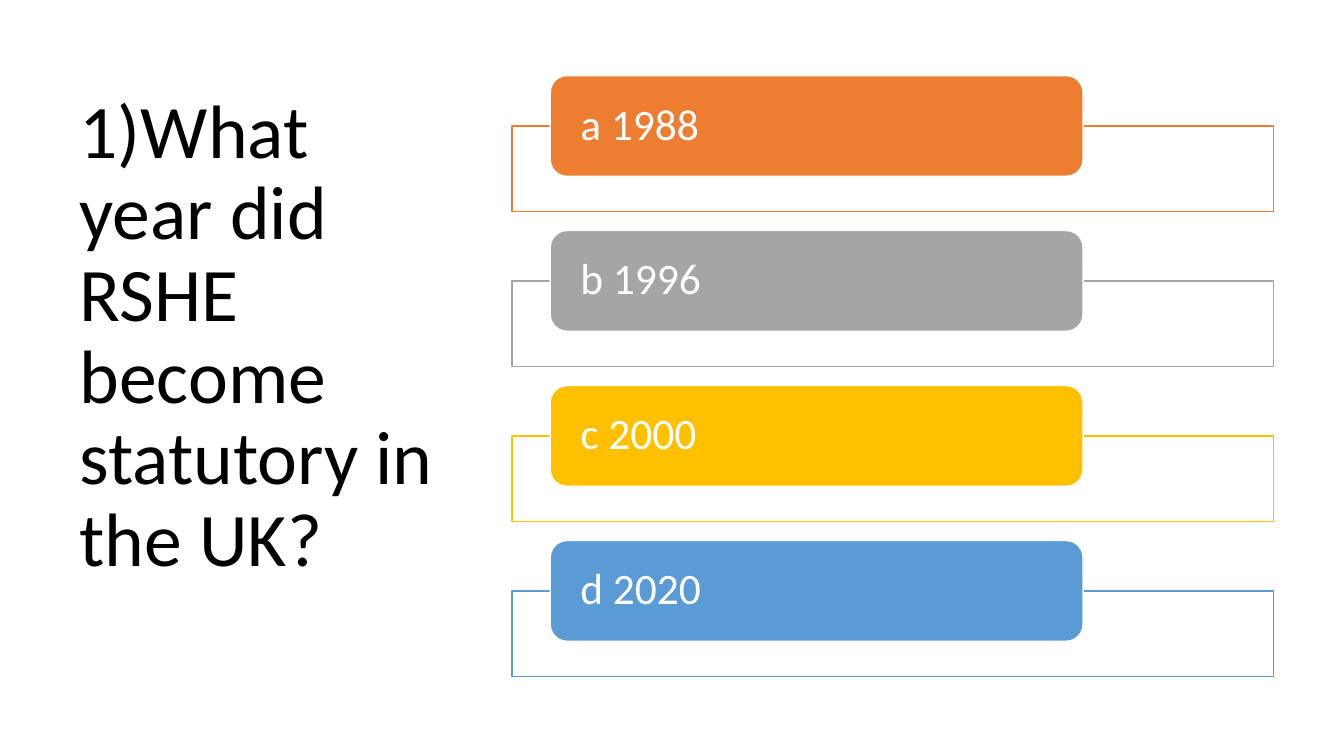
from dataclasses import dataclass

from lxml import etree
from pptx import Presentation
from pptx import util as u
from pptx.dml.color import RGBColor
from pptx.enum import shapes, text
from pptx.oxml.ns import qn


@dataclass(frozen=True)
class Theme:
    font: str = "Calibri"
    ink: str = "000000"
    paper: str = "FFFFFF"
    hues: tuple = ("ED7D31", "A5A5A5", "FFC000", "5B9BD5")
    head: int = 54
    body: int = 31


THEME = Theme()
WIDE, HIGH = 13.33, 7.5


def write(shape, words, size, color, pad=(0.1, 0.05, 0.1, 0.05)):
    """Fill a shape with one left-aligned, vertically centred paragraph."""
    frame = shape.text_frame
    frame.word_wrap = True
    frame.auto_size = text.MSO_AUTO_SIZE.NONE
    frame.vertical_anchor = text.MSO_ANCHOR.MIDDLE
    (frame.margin_left, frame.margin_top,
     frame.margin_right, frame.margin_bottom) = map(u.Inches, pad)
    para = frame.paragraphs[0]
    para.alignment = text.PP_ALIGN.LEFT
    para.line_spacing = 0.9
    run = para.add_run()
    run.text = words
    run.font.name = THEME.font
    run.font.size = u.Pt(size)
    run.font.color.rgb = RGBColor.from_string(color)


def block(slide, kind, box, fill, line, alpha=None):
    shape = slide.shapes.add_shape(kind, *map(u.Inches, box))
    shape.shadow.inherit = False
    shape.fill.solid()
    shape.fill.fore_color.rgb = RGBColor.from_string(fill)
    shape.line.color.rgb = RGBColor.from_string(line)
    shape.line.width = u.Pt(1)
    if alpha:
        tint = shape.fill._xPr.find(qn("a:solidFill"))[0]
        etree.SubElement(tint, qn("a:alpha")).set("val", str(alpha * 1000))
    return shape


def question(slide, box, words):
    title = slide.shapes.title
    title.left, title.top, title.width, title.height = map(u.Inches, box)
    # The deep bottom margin lifts the text by half a line
    write(title, words, THEME.head, THEME.ink, pad=(0.1, 0.05, 0.1, 0.86))


def answer(slide, box, words, hue):
    left, top, width, height = box
    # Outlined panel behind the label
    panel = (left, top + height / 2, width, 0.85)
    block(slide, shapes.MSO_SHAPE.RECTANGLE, panel, THEME.paper, hue, alpha=90)
    # Coloured label, inset by a twentieth of the panel
    label = (left + width / 20, top, width * 0.7, height)
    pill = block(slide, shapes.MSO_SHAPE.ROUNDED_RECTANGLE, label,
                 hue, THEME.paper)
    write(pill, words, THEME.body, THEME.paper, pad=(0.25, 0, 0.25, 0))


def answers(slide, box, items):
    left, top, width, height = box
    step = height / len(items)
    for row, (words, hue) in enumerate(zip(items, THEME.hues)):
        answer(slide, (left, top + row * step, width, 1), words, hue)


def main():
    deck = Presentation()
    deck.slide_width, deck.slide_height = u.Inches(WIDE), u.Inches(HIGH)
    slide = deck.slides.add_slide(deck.slide_layouts[5])
    question(slide, (0.69, 0.7, WIDE * 0.28, 6.11),
             "1)What year did RSHE become statutory in the UK?")
    answers(slide, (5.08, 0.75, 7.55, 6.15),
            ("a 1988", "b 1996", "c 2000", "d 2020"))
    deck.save("out.pptx")


if __name__ == "__main__":
    main()
